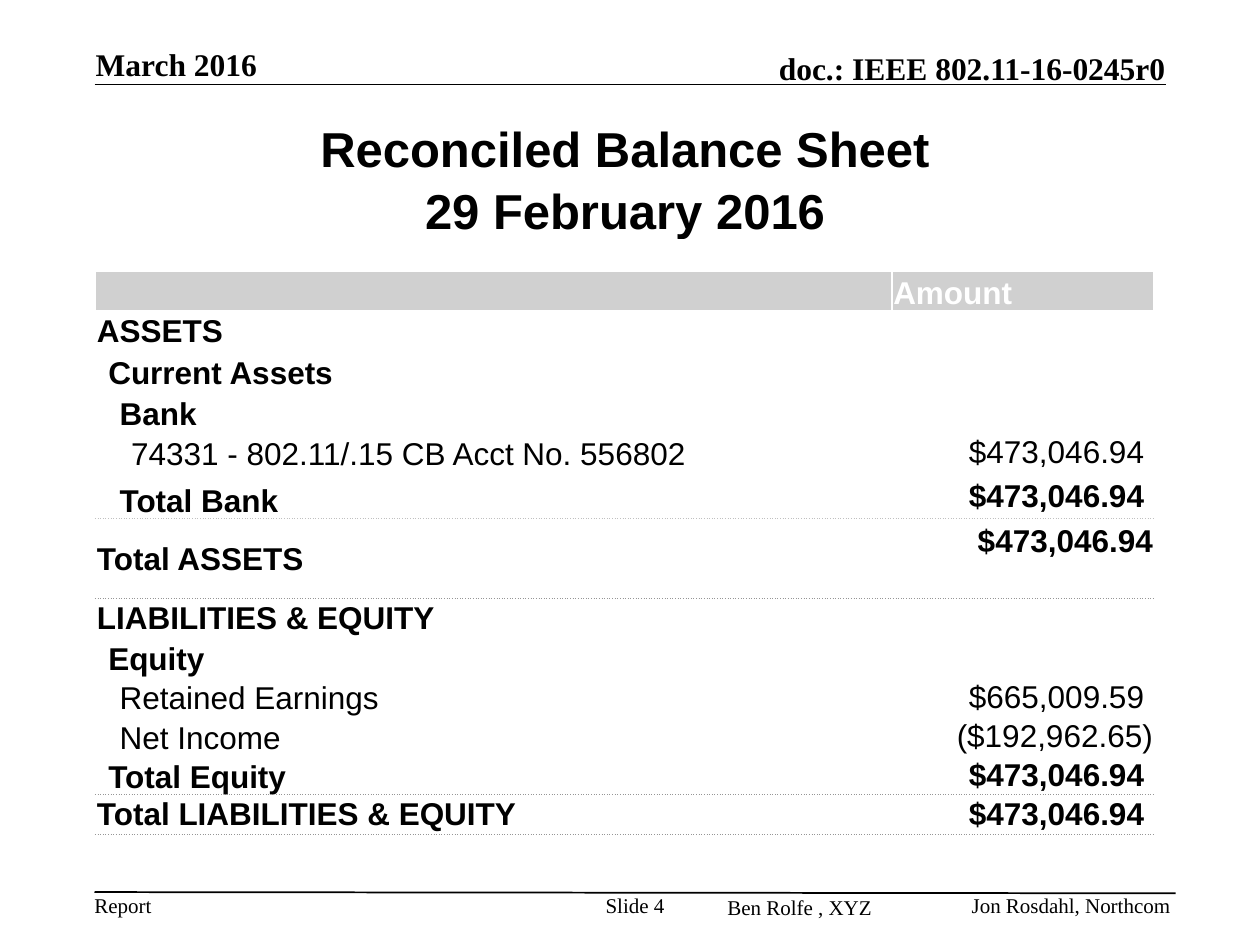
import pptx
import pptx.util
import pptx.dml.color
import pptx.enum.shapes
import pptx.enum.text
import pptx.oxml
import pptx.oxml.ns
from typing import NamedTuple

Inches = pptx.util.Inches
Pt = pptx.util.Pt
ALIGN = pptx.enum.text.PP_ALIGN
ANCHOR = pptx.enum.text.MSO_ANCHOR
BLACK, WHITE, BAND = "000000", "FFFFFF", "D0D0D0"
SILVER, GREY = "C0C0C0", "969696"
PAD = 0.01      # cell margin
STEP = 0.09     # indent of one account level
CLOSE = 0.07    # room kept for the closing bracket of negative amounts


class Note(NamedTuple):
    text: str
    left: float
    top: float
    width: float
    height: float
    size: int = 12
    bold: bool = False
    align: ALIGN = ALIGN.LEFT
    anchor: ANCHOR = ANCHOR.TOP
    wrap: bool = True


class Row(NamedTuple):
    height: float
    label: str = ""
    amount: str = ""
    level: int = 0
    bold: bool = True
    size: int = 18
    span: bool = False
    rule: str = ""          # colour of the dotted line below
    gap: float = CLOSE      # extra right margin of the amount
    lift: float = 0         # bottom margin of the amount


NOTES = [
    Note("Report", 0.75, 7.08, 0.46, 0.2, wrap=False),
    Note("doc.: IEEE 802.11-16-0245r0", 3.92, 0.39, 5.33, 0.3, 18, True, ALIGN.RIGHT, ANCHOR.BOTTOM),
    Note("Ben Rolfe , XYZ", 5.67, 7.1, 1.25, 0.2, align=ALIGN.RIGHT),
    Note("March 2016", 0.76, 0.36, 2.05, 0.3, 18, True, anchor=ANCHOR.BOTTOM),
    Note("Slide 4", 4.75, 7.08, 0.58, 0.4, align=ALIGN.CENTER),
    Note("Jon Rosdahl, Northcom", 7.08, 7.08, 2.21, 0.25, align=ALIGN.RIGHT),
]
ROWS = [
    Row(0.49, "Reconciled Balance Sheet", size=28, span=True),
    Row(0.49, "29 February 2016", size=28, span=True),
    Row(0.25, span=True),
    Row(0.32, amount="Amount"),
    Row(0.32, "ASSETS"),
    Row(0.32, "Current Assets", level=1),
    Row(0.32, "Bank", level=2),
    Row(0.32, "74331 - 802.11/.15 CB Acct No. 556802", "$473,046.94", 3, False),
    Row(0.37, "Total Bank", "$473,046.94", 2, rule=SILVER),
    Row(0.63, "Total ASSETS", "$473,046.94", rule=GREY, gap=0, lift=0.28),
    Row(0.32, "LIABILITIES & EQUITY", span=True),
    Row(0.3, "Equity", level=1),
    Row(0.3, "Retained Earnings", "$665,009.59", 2, False),
    Row(0.3, "Net Income", "($192,962.65)", 2, False, gap=0),
    Row(0.3, "Total Equity", "$473,046.94", 1, rule=GREY),
    Row(0.3, "Total LIABILITIES & EQUITY", "$473,046.94", rule=GREY),
    Row(0.32),
]


def rgb(code: str):
    return pptx.dml.color.RGBColor.from_string(code)


def write(frame, text: str, *, size=18, bold=False, font="Arial", color=BLACK, align=ALIGN.LEFT) -> None:
    para = frame.paragraphs[0]
    para.alignment = align
    run = para.add_run()
    run.text = text
    run.font.name, run.font.size, run.font.bold = font, Pt(size), bold
    run.font.color.rgb = rgb(color)


def add_note(slide, note: Note) -> None:
    box = slide.shapes.add_textbox(*map(Inches, (note.left, note.top, note.width, note.height)))
    frame = box.text_frame
    frame.margin_left = frame.margin_right = frame.margin_top = frame.margin_bottom = 0
    frame.word_wrap, frame.vertical_anchor = note.wrap, note.anchor
    write(frame, note.text, size=note.size, bold=note.bold, font="Times New Roman", align=note.align)


def add_line(slide, left: float, top: float, right: float, bottom: float) -> None:
    line = slide.shapes.add_connector(
        pptx.enum.shapes.MSO_CONNECTOR.STRAIGHT, *map(Inches, (left, top, right, bottom)))
    line.line.color.rgb, line.line.width = rgb(BLACK), Pt(1)
    props = line._element.spPr
    props.append(props.makeelement(pptx.oxml.ns.qn("a:effectLst"), {}))


def add_edge(cell, tag: str, color: str) -> None:
    """Put a dotted border first in the cell's properties."""
    xml = (f'<a:{tag} {pptx.oxml.ns.nsdecls("a")} w="{Pt(0.5)}"><a:solidFill>'
           f'<a:srgbClr val="{color}"/></a:solidFill><a:prstDash val="sysDot"/></a:{tag}>')
    cell._tc.get_or_add_tcPr().insert(0, pptx.oxml.parse_xml(xml))


def clear(cell, fill: str) -> None:
    """Set the fill and margins, and keep an empty line low."""
    if fill:
        cell.fill.solid()
        cell.fill.fore_color.rgb = rgb(fill)
    else:
        cell.fill.background()
    cell.margin_left = cell.margin_right = cell.margin_top = Inches(PAD)
    cell.margin_bottom = 0
    cell.text_frame.paragraphs[0]._p.get_or_add_endParaRPr().set("sz", "1000")


def fill_row(label, amount, row: Row, above: str) -> None:
    head = row.amount == "Amount"
    title = row.size > 18
    for cell in (label, amount):
        clear(cell, BAND if head else "")
        if row.rule:
            add_edge(cell, "lnB", row.rule)
        if above:
            add_edge(cell, "lnT", above)
    if row.span:
        label.merge(amount)
    if row.label:
        label.margin_left = Inches(PAD + STEP * row.level)
        label.vertical_anchor = ANCHOR.BOTTOM if title or row.level else ANCHOR.MIDDLE
        write(label.text_frame, row.label, size=row.size, bold=row.bold,
              align=ALIGN.CENTER if title else ALIGN.LEFT)
    if row.amount:
        amount.margin_right = Inches(PAD + row.gap)
        amount.margin_bottom = Inches(row.lift)
        amount.vertical_anchor = ANCHOR.BOTTOM if head else ANCHOR.MIDDLE
        write(amount.text_frame, row.amount, bold=row.bold, color=WHITE if head else BLACK,
              align=ALIGN.LEFT if head else ALIGN.RIGHT)


def add_sheet(slide) -> None:
    cols = (6.32, 2.08)
    high = sum(row.height for row in ROWS)
    table = slide.shapes.add_table(
        len(ROWS), len(cols), *map(Inches, (0.76, 0.92, sum(cols), high))).table
    table.first_row = table.horz_banding = False
    for col, width in zip(table.columns, cols):
        col.width = Inches(width)
    above = ""
    for i, row in enumerate(ROWS):
        table.rows[i].height = Inches(row.height)
        fill_row(table.cell(i, 0), table.cell(i, 1), row, above)
        above = row.rule


def main() -> None:
    deck = pptx.Presentation()
    deck.slide_width, deck.slide_height = Inches(10), Inches(7.5)
    slide = deck.slides.add_slide(deck.slide_layouts[6])
    add_line(slide, 0.75, 0.67, 9.25, 0.67)
    add_line(slide, 0.75, 7.08, 9.33, 7.09)
    for note in NOTES:
        add_note(slide, note)
    add_sheet(slide)
    deck.save("out.pptx")


if __name__ == "__main__":
    main()
